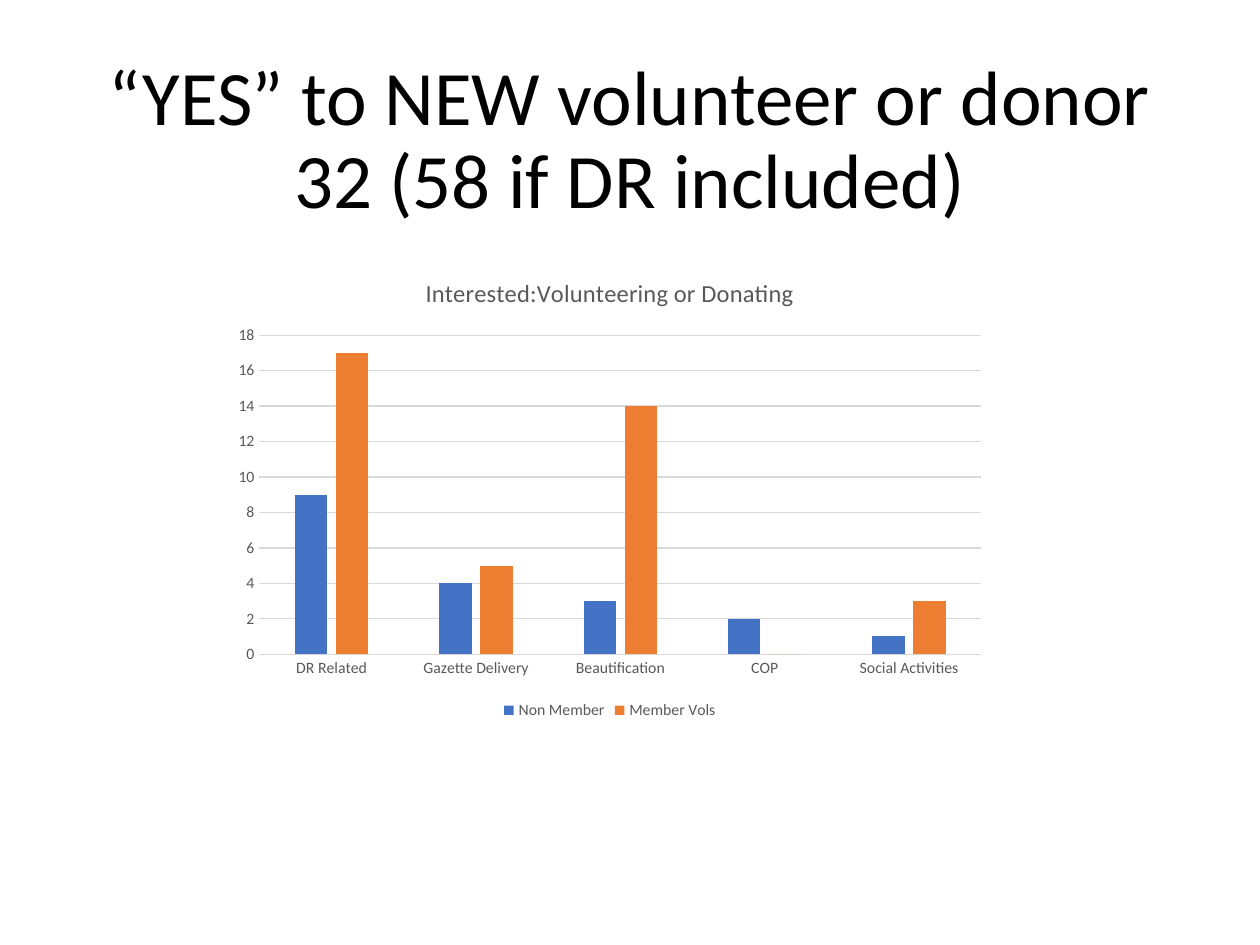
import pptx
import pptx.chart.data
import pptx.dml.color
import pptx.enum.chart
import pptx.enum.text
import pptx.util
from pptx.util import Inches, Pt

# Content
HEADING = "“YES” to NEW volunteer or donor\v32 (58 if DR included)"
CHART_TITLE = "Interested:Volunteering or Donating"
INTERESTS = ["DR Related", "Gazette Delivery", "Beautification", "COP", "Social Activities"]

BLACK = pptx.dml.color.RGBColor(0x00, 0x00, 0x00)
GREY = pptx.dml.color.RGBColor(0x59, 0x59, 0x59)
LIGHT_GREY = pptx.dml.color.RGBColor(0xD9, 0xD9, 0xD9)
BLUE = pptx.dml.color.RGBColor(0x44, 0x72, 0xC4)
ORANGE = pptx.dml.color.RGBColor(0xED, 0x7D, 0x31)

GROUPS = [
    ("Non Member", (9, 4, 3, 2, 1), BLUE),
    ("Member Vols", (17, 5, 14, 0, 3), ORANGE),
]


def set_font(font, size, color):
    font.name = "Calibri"
    font.size = Pt(size)
    font.bold = False
    font.color.rgb = color


def set_line(line):
    line.color.rgb = LIGHT_GREY
    line.width = Pt(0.75)


presentation = pptx.Presentation()
presentation.slide_width, presentation.slide_height = Inches(10), Inches(7.5)
slide = presentation.slides.add_slide(presentation.slide_layouts[5])

# Heading
heading = slide.shapes.title
heading.left, heading.top = Inches(0.69), Inches(0.4)
heading.width, heading.height = Inches(8.62), Inches(1.45)
heading.text_frame.text = HEADING
heading.text_frame.word_wrap = True
heading.text_frame.auto_size = pptx.enum.text.MSO_AUTO_SIZE.NONE
heading.text_frame.vertical_anchor = pptx.enum.text.MSO_ANCHOR.MIDDLE
paragraph = heading.text_frame.paragraphs[0]
paragraph.alignment = pptx.enum.text.PP_ALIGN.CENTER
paragraph.line_spacing = 0.9
set_font(paragraph.font, 44, BLACK)

# Chart of interest by group
interest_data = pptx.chart.data.CategoryChartData()
interest_data.categories = INTERESTS
for name, counts, _ in GROUPS:
    interest_data.add_series(name, counts)
chart = slide.shapes.add_chart(
    pptx.enum.chart.XL_CHART_TYPE.COLUMN_CLUSTERED,
    Inches(1.77), Inches(2.03), Inches(6.14), Inches(3.72), interest_data,
).chart
set_font(chart.font, 10, BLACK)

chart.has_title = True
chart.chart_title.include_in_layout = False
chart.chart_title.text_frame.text = CHART_TITLE
set_font(chart.chart_title.text_frame.paragraphs[0].font, 14, GREY)

# Columns
columns = chart.plots[0]
columns.vary_by_categories = False
columns.gap_width = 219
columns.overlap = -27
for series, (_, _, color) in zip(columns.series, GROUPS):
    series.invert_if_negative = False
    series.format.fill.solid()
    series.format.fill.fore_color.rgb = color

# Axes
for axis in (chart.category_axis, chart.value_axis):
    axis.major_tick_mark = pptx.enum.chart.XL_TICK_MARK.NONE
    axis.minor_tick_mark = pptx.enum.chart.XL_TICK_MARK.NONE
    set_font(axis.tick_labels.font, 9, GREY)
set_line(chart.category_axis.format.line)
chart.value_axis.format.line.fill.background()
chart.value_axis.minimum_scale = 0
chart.value_axis.maximum_scale = 18
chart.value_axis.major_unit = 2
chart.value_axis.has_major_gridlines = True
set_line(chart.value_axis.major_gridlines.format.line)

# Legend
chart.has_legend = True
chart.legend.position = pptx.enum.chart.XL_LEGEND_POSITION.BOTTOM
chart.legend.include_in_layout = False
set_font(chart.legend.font, 9, GREY)

presentation.save("out.pptx")
